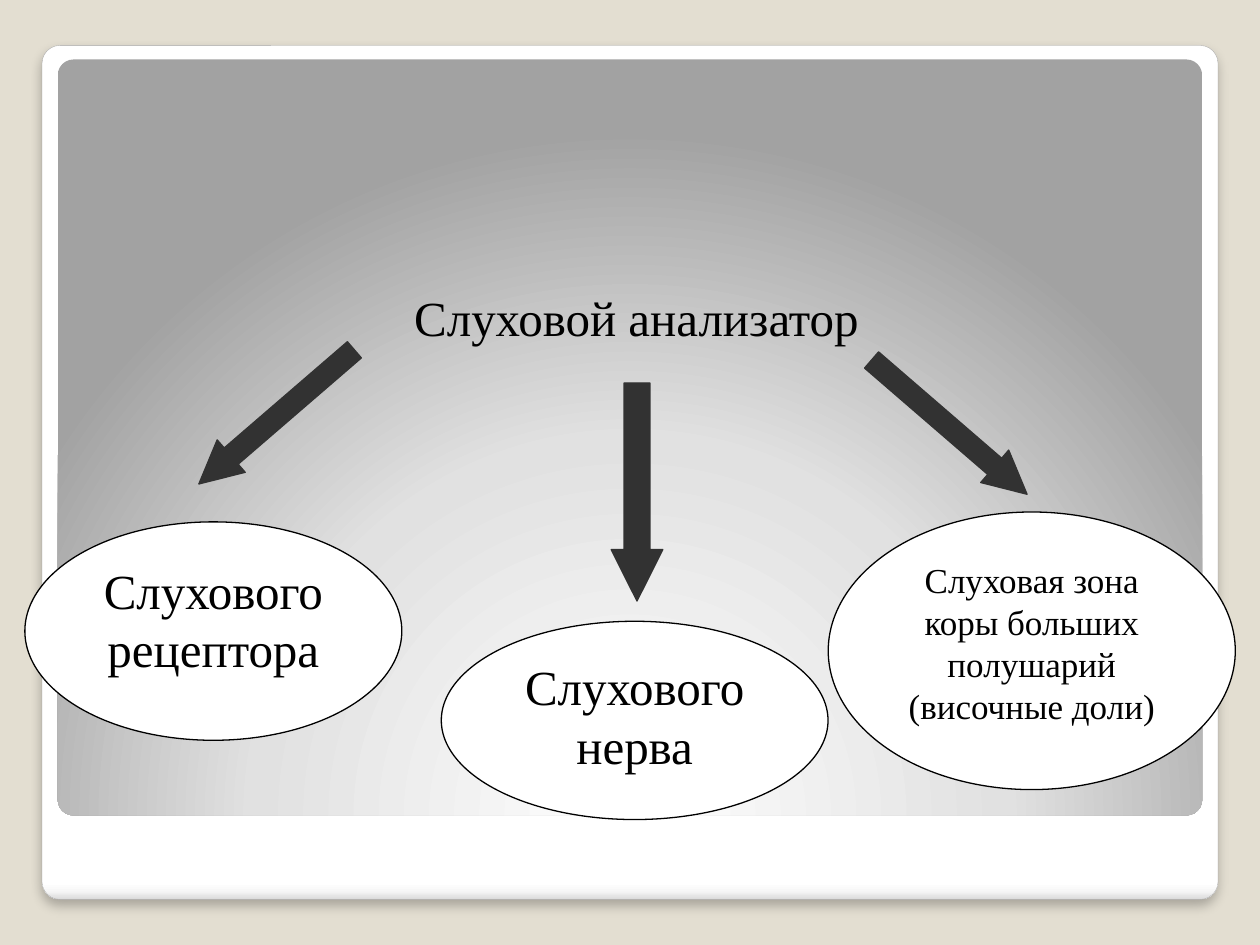
from dataclasses import dataclass
from lxml.etree import SubElement
from pptx import Presentation
from pptx.dml.color import RGBColor as Rgb
from pptx.enum.shapes import MSO_SHAPE as Kind
from pptx.enum.text import MSO_ANCHOR as Anchor, PP_ALIGN as Align
from pptx.oxml import parse_xml
from pptx.oxml.ns import nsdecls, qn
from pptx.util import Pt


@dataclass(frozen=True)
class Theme:
    """Colours, font and type sizes of the slide."""
    back: str = "E3DED1"
    edge: str = "A4A4A4"
    dark: str = "323232"
    white: str = "FFFFFF"
    ink: str = "000000"
    font: str = "Times New Roman"
    big: int = 28
    small: int = 20
    rim: tuple = ((0, "FFFFFF"), (98, "FFFFFF"), (99, "F7F7F7"), (100, "DADADA"))
    glow: tuple = ((0, "FFFFFF"), (55, "E1E1E1"), (100, "A2A2A2"))


THEME = Theme()
DOWN = '<a:lin ang="5400000" scaled="0"/>'
ROUND = ('<a:path path="circle"><a:fillToRect l="50000" t="175000" '
         'r="50000" b="-75000"/></a:path>')


def add_form(slide, kind, box, fill=None, line=None, width=0.75):
    """Add a preset shape without shadow, with plain fill and line."""
    form = slide.shapes.add_shape(kind, *map(Pt, box))
    form.shadow.inherit = False
    if fill:
        form.fill.solid()
        form.fill.fore_color.rgb = Rgb.from_string(fill)
    if line:
        form.line.color.rgb = Rgb.from_string(line)
        form.line.width = Pt(width)
    else:
        form.line.fill.background()
    return form


def add_panel(slide, box, stops, way, line=None):
    """Add a rounded panel with a gradient fill."""
    form = add_form(slide, Kind.ROUNDED_RECTANGLE, box, line=line, width=0.16)
    form.adjustments[0] = 0.021
    marks = "".join(f'<a:gs pos="{at * 1000}"><a:srgbClr val="{tint}"/></a:gs>'
                    for at, tint in stops)
    fill = parse_xml(f'<a:gradFill {nsdecls("a")} rotWithShape="1">'
                     f'<a:gsLst>{marks}</a:gsLst>{way}</a:gradFill>')
    form._element.spPr.find(qn("a:prstGeom")).addnext(fill)
    return form


def add_shade(form):
    """Give a shape a soft shadow below it."""
    list_ = form._element.spPr.find(qn("a:effectLst"))
    shade = SubElement(list_, qn("a:outerShdw"), blurRad=str(Pt(6)),
                       dist=str(Pt(4)), dir="5400000", algn="tl", rotWithShape="0")
    tint = SubElement(shade, qn("a:srgbClr"), val=THEME.ink)
    SubElement(tint, qn("a:alpha"), val="25000")


def set_text(frame, text, size):
    """Write centred text at the top of a frame."""
    frame.word_wrap = True
    frame.vertical_anchor = Anchor.TOP
    frame.text = text
    para = frame.paragraphs[0]
    para.alignment = Align.CENTER
    font = para.runs[0].font
    font.name, font.size = THEME.font, Pt(size)
    font.color.rgb = Rgb.from_string(THEME.ink)
    return para


def add_title(slide, box, text):
    """Add the heading that the arrows start from."""
    frame = slide.shapes.add_textbox(*map(Pt, box)).text_frame
    frame.margin_left, frame.margin_top = Pt(14.4), Pt(7.2)
    set_text(frame, text, THEME.big).space_before = Pt(2.5)


def add_arrow(slide, box, turn):
    """Add a block arrow turned by some degrees."""
    form = add_form(slide, Kind.LEFT_ARROW, box, THEME.dark, THEME.dark)
    form.adjustments[1] = 0.998
    form.rotation = turn


def add_oval(slide, box, text, size):
    """Add a white oval with its label."""
    form = add_form(slide, Kind.OVAL, box, THEME.white, THEME.ink)
    set_text(form.text_frame, text, size).space_after = Pt(10)


def main():
    """Build and save the slide."""
    deck = Presentation()
    deck.slide_width, deck.slide_height = Pt(720), Pt(540)
    slide = deck.slides.add_slide(deck.slide_layouts[6])
    back = slide.background.fill
    back.solid()
    back.fore_color.rgb = Rgb.from_string(THEME.back)

    add_shade(add_panel(slide, (24, 26, 672, 488), THEME.rim, DOWN, THEME.edge))
    add_panel(slide, (33, 34, 654, 432), THEME.glow, ROUND)
    add_title(slide, (0, 157, 720, 325.5), "Слуховой анализатор")

    for box, turn in (
        ((99.4, 226, 117.4, 24.5), 319.2),
        ((301.7, 266.4, 124.6, 29.5), 270),
        ((483.8, 231.8, 117.4, 24.5), 220.8),
    ):
        add_arrow(slide, box, turn)

    for box, text, size in (
        ((14.2, 298.2, 215.4, 124.8), "Слухового рецептора", THEME.big),
        ((252.2, 355, 221, 113.3), "Слухового нерва", THEME.big),
        ((473.3, 292.6, 232.6, 158.6),
         "Слуховая зона коры больших полушарий (височные доли)", THEME.small),
    ):
        add_oval(slide, box, text, size)

    deck.save("out.pptx")


if __name__ == "__main__":
    main()
